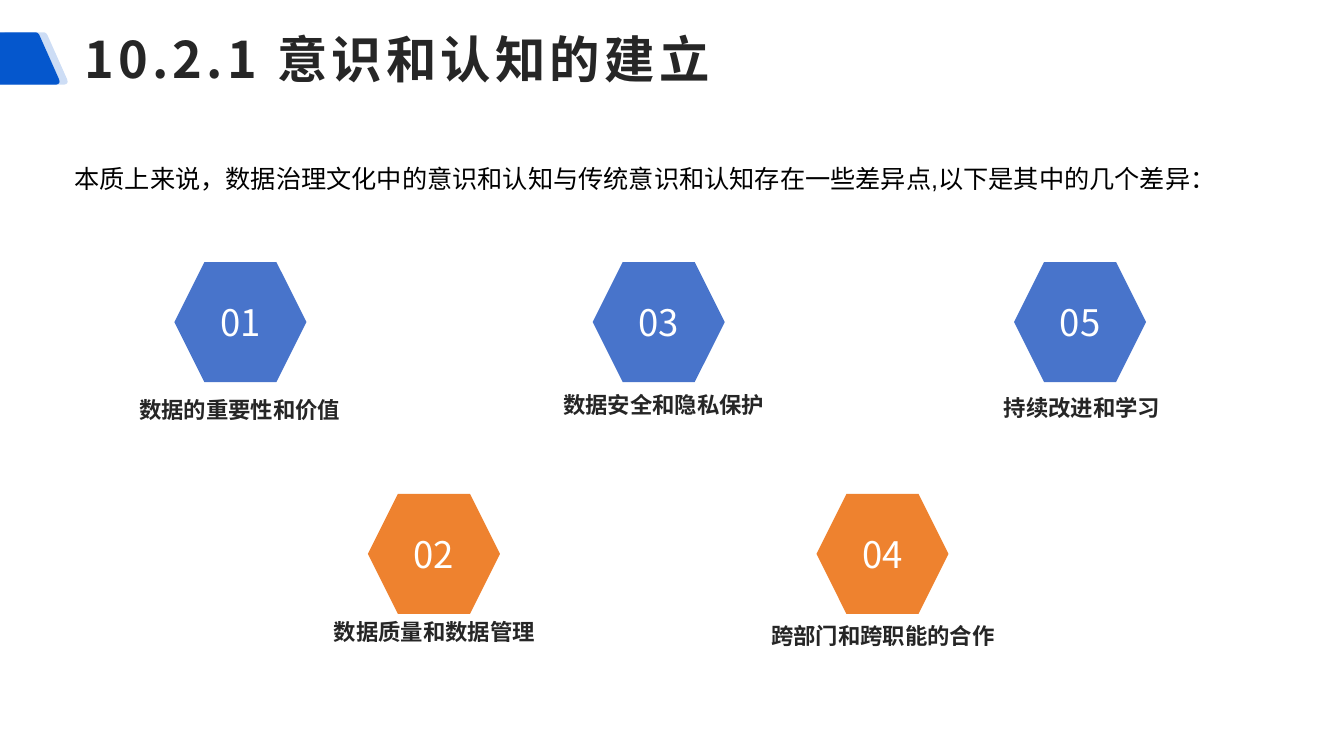
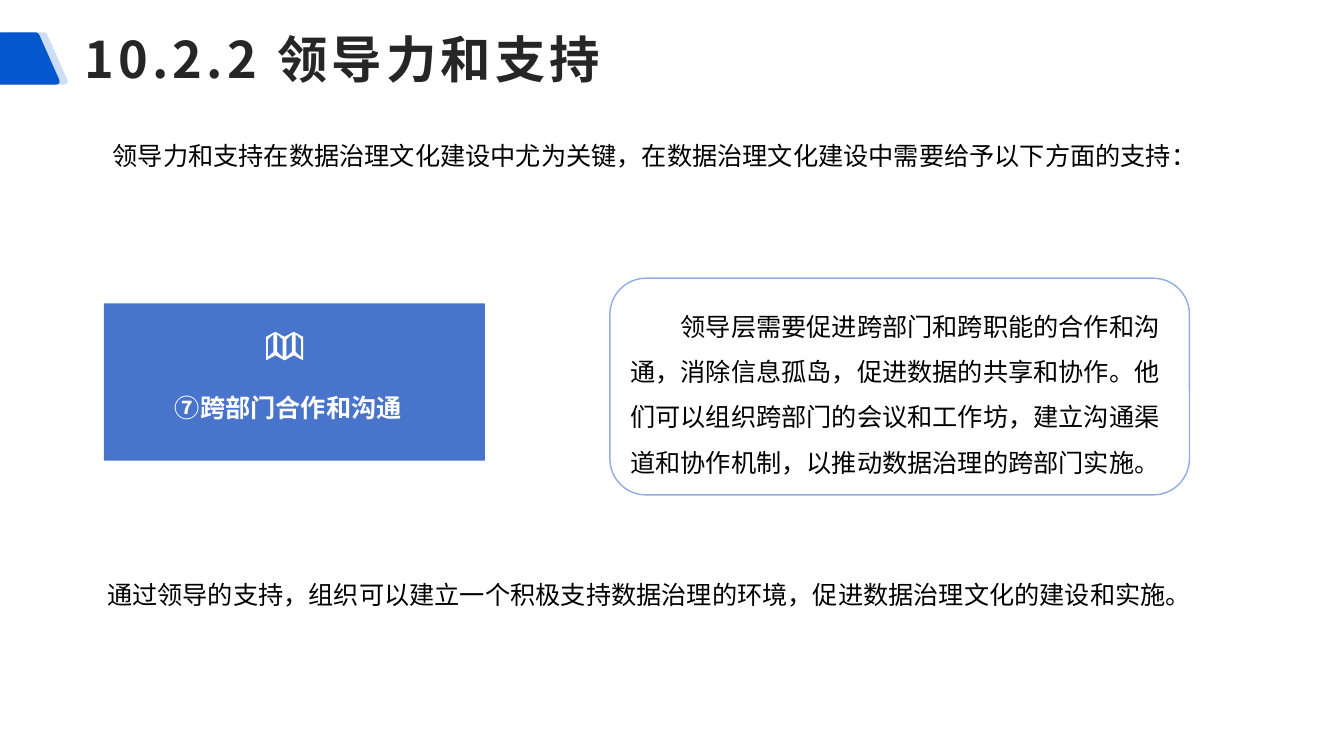
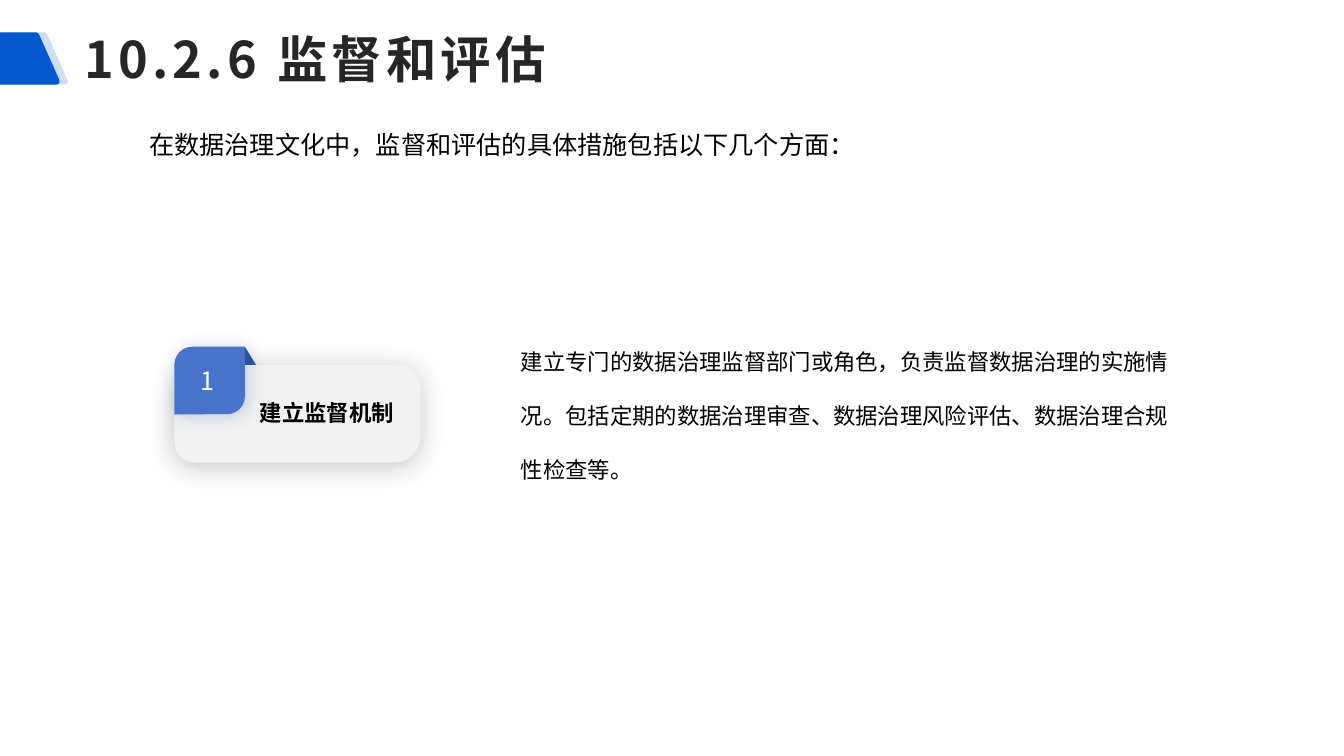
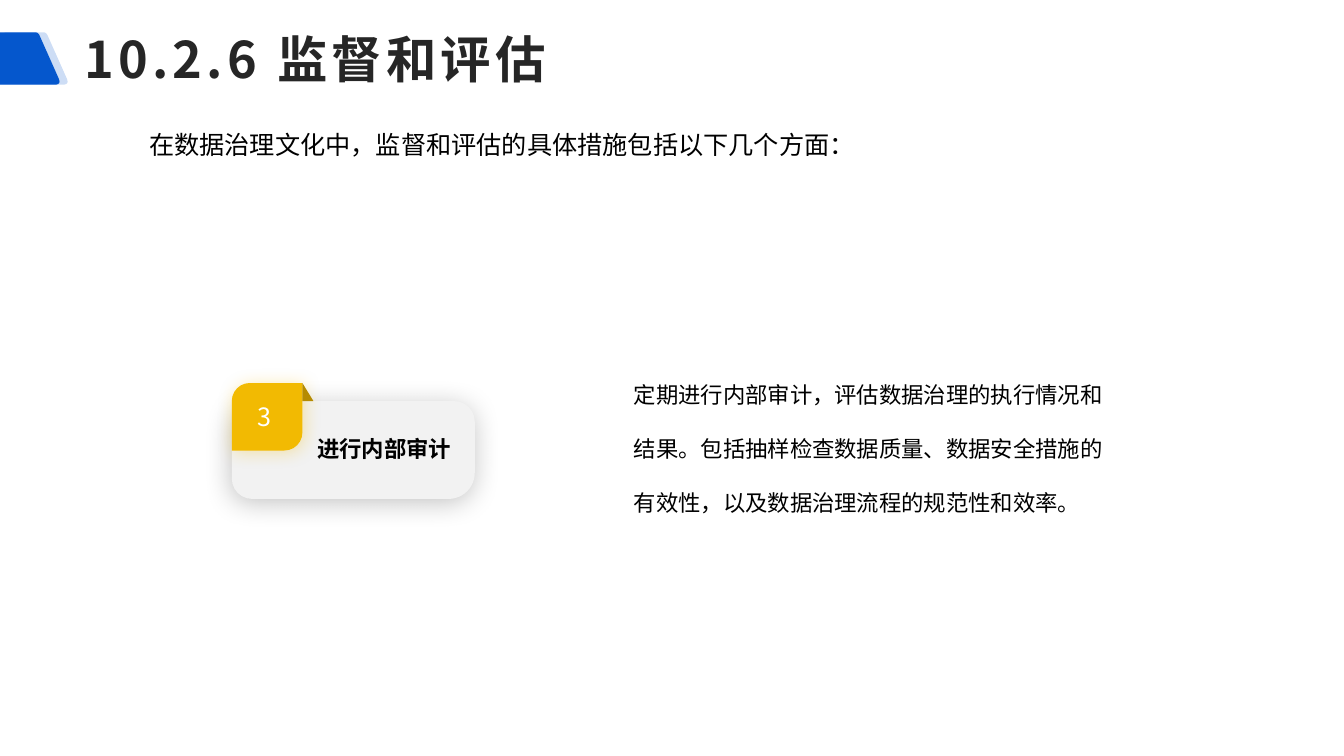
import dataclasses
import math

import pptx
import pptx.dml.color
import pptx.enum.shapes
import pptx.enum.text
import pptx.oxml
import pptx.oxml.ns
import pptx.util


@dataclasses.dataclass(frozen=True)
class Theme:
    band: str = "0557CD"
    blue: str = "4874CB"
    blue_fold: str = "2E54A1"
    pale_blue: str = "91ACE0"
    orange: str = "EE822F"
    yellow: str = "F2BA02"
    yellow_fold: str = "B58B01"
    card: str = "F2F2F2"
    ink: str = "262626"
    black: str = "000000"
    white: str = "FFFFFF"
    heading_font: str = "Noto Sans CJK SC"
    body_font: str = "Arial"
    label_font: str = "Times New Roman"
    title_size: float = 36
    number_size: float = 26.1
    body_size: float = 18
    label_size: float = 16


theme = Theme()
Kind = pptx.enum.shapes.MSO_SHAPE
CENTER = pptx.enum.text.PP_ALIGN.CENTER
MIDDLE = pptx.enum.text.MSO_ANCHOR.MIDDLE
qn = pptx.oxml.ns.qn

deck = pptx.Presentation()
deck.slide_width = pptx.util.Inches(13.333)
deck.slide_height = pptx.util.Inches(7.5)
COLUMNS, ROWS = 160, 90
column = deck.slide_width / COLUMNS
row = deck.slide_height / ROWS


def area(left, top, width, height):
    return [round(left * column), round(top * row), round(width * column), round(height * row)]


def write(shape, text, color=theme.black, indent=0, spacing=0, frame=(), paragraph=(), font=()):
    line = shape.text_frame.paragraphs[0]
    run = line.add_run()
    run.text = text
    formats = (
        (shape.text_frame, {"word_wrap": True, "auto_size": pptx.enum.text.MSO_AUTO_SIZE.NONE}, frame),
        (line, {"alignment": pptx.enum.text.PP_ALIGN.LEFT}, paragraph),
        (run.font, {"name": theme.body_font, "size": pptx.util.Pt(theme.body_size), "bold": False}, font),
    )
    for target, defaults, changes in formats:
        for attribute, value in {**defaults, **dict(changes)}.items():
            setattr(target, attribute, value)
    run.font.color.rgb = pptx.dml.color.RGBColor.from_string(color)
    properties = run._r.get_or_add_rPr()
    properties.set("lang", "zh-CN")
    if spacing:
        properties.set("spc", str(spacing * 100))
    east_asian = properties.makeelement(qn("a:ea"), {"typeface": theme.heading_font})
    properties.find(qn("a:latin")).addnext(east_asian)
    if indent:
        line._p.get_or_add_pPr().set("indent", str(round(indent * column)))


layout = deck.slide_layouts.get_by_name("Title Only")
for attribute, value in zip(("left", "top", "width", "height"), area(8.88, 0.96, 151.08, 12)):
    setattr(layout.placeholders[0], attribute, value)

title_style = {
    "color": theme.ink,
    "spacing": 3,
    "frame": {"vertical_anchor": MIDDLE},
    "font": {"name": theme.heading_font, "size": pptx.util.Pt(theme.title_size), "bold": True},
}
titles = ("10.2.1 意识和认知的建立", "10.2.2 领导力和支持", "10.2.6 监督和评估", "10.2.6 监督和评估")
slides = []
for title in titles:
    slide = deck.slides.add_slide(layout)
    write(slide.shapes.title, title, **title_style)
    slides.append(slide)
awareness, leadership, mechanism, audit = slides

band_corners = ((0.4, 3.84, 0.4), (5.5, 3.84, 0.4), (8.28, 10.08, 0.8), (-2.3, 10.08, 0.8))
for shift, opacity in ((0, 20), (-0.96, 100)):
    outline = []
    for index, (x, y, cut) in enumerate(band_corners):
        ends = []
        for neighbour in (band_corners[index - 1], band_corners[(index + 1) % 4]):
            share = cut / math.dist((x, y), neighbour[:2])
            ends.append((x + (neighbour[0] - x) * share, y + (neighbour[1] - y) * share))
        for step in range(7):
            t = step / 6
            curve = [
                (1 - t) ** 2 * start + 2 * t * (1 - t) * middle + t**2 * end
                for start, middle, end in zip(ends[0], (x, y), ends[1])
            ]
            outline.append((round((curve[0] + shift) * column), round(curve[1] * row)))
    builder = awareness.shapes.build_freeform(*outline[0])
    builder.add_line_segments(outline[1:])
    band = builder.convert_to_shape()
    band.shadow.inherit = False
    band.line.fill.background()
    band.fill.solid()
    band.fill.fore_color.rgb = pptx.dml.color.RGBColor.from_string(theme.band)
    tint = band._element.spPr.find(qn("a:solidFill"))[0]
    tint.append(tint.makeelement(qn("a:alpha"), {"val": str(opacity * 1000)}))
    layout.shapes.element.append(band._element)

intro = {"paragraph": {"line_spacing": 1.5}}
bold_label = {"name": theme.label_font, "size": pptx.util.Pt(theme.label_size), "bold": True}
measures = "在数据治理文化中，监督和评估的具体措施包括以下几个方面："
bubble_text = "领导层需要促进跨部门和跨职能的合作和沟通，消除信息孤岛，促进数据的共享和协作。他们可以组织跨部门的会议和工作坊，建立沟通渠道和协作机制，以推动数据治理的跨部门实施。"

panels = [
    (leadership, Kind.ROUNDED_RECTANGLE, (12.36, 36.12, 45.36, 18.72),
     {"fill": theme.blue, "adjust": (0.005,)}),
    (leadership, Kind.ROUNDED_RECTANGLE, (72.6, 33.12, 69, 25.8),
     {"line": theme.pale_blue, "text": bubble_text,
      "style": {"indent": 6, "frame": {"vertical_anchor": MIDDLE}, **intro}}),
]
texts = [
    (awareness, "本质上来说，数据治理文化中的意识和认知与传统意识和认知存在一些差异点,以下是其中的几个差异：",
     (7.68, 17.04, 145.44, 6.6), intro),
    (leadership, "领导力和支持在数据治理文化建设中尤为关键，在数据治理文化建设中需要给予以下方面的支持：",
     (12.24, 16.08, 133.08, 4.8), {}),
    (leadership, "通过领导的支持，组织可以建立一个积极支持数据治理的环境，促进数据治理文化的建设和实施。",
     (8.88, 68.4, 134.4, 4.8), {"indent": 2.7}),
    (leadership, "⑦跨部门合作和沟通", (10.2, 44.28, 48.24, 9),
     {"color": theme.white, "frame": {"margin_left": 0, "margin_right": 0},
      "paragraph": {"alignment": CENTER, "line_spacing": 1.5}, "font": {"bold": True}}),
]

differences = (
    ("数据的重要性和价值", 20.76, (13.2, 46.56, 30.72, 4.44), 1),
    ("数据质量和数据管理", 43.8, (28.44, 72.96, 46.56, 4.44), 1),
    ("数据安全和隐私保护", 70.56, (63.84, 44.64, 30.36, 5.76), 1.4),
    ("跨部门和跨职能的合作", 97.2, (88.44, 72.24, 33.36, 5.76), 1.4),
    ("持续改进和学习", 120.72, (109.44, 45, 38.76, 5.76), 1.4),
)
number_style = {
    "color": theme.white,
    "frame": {"vertical_anchor": MIDDLE, "margin_left": 0, "margin_right": 0},
    "paragraph": {"alignment": CENTER},
    "font": {"name": theme.heading_font, "size": pptx.util.Pt(theme.number_size)},
}
for index, (difference, left, label_area, leading) in enumerate(differences):
    top, fill = ((31.2, theme.blue), (58.8, theme.orange))[index % 2]
    panels.append((awareness, Kind.HEXAGON, (left, top, 15.72, 14.28),
                   {"fill": fill, "text": f"{index + 1:02}", "style": number_style}))
    texts.append((awareness, difference, label_area, {
        "color": theme.ink,
        "frame": {"vertical_anchor": MIDDLE} if leading == 1 else {},
        "paragraph": {"alignment": CENTER, "line_spacing": leading},
        "font": bold_label,
    }))

cards = (
    (mechanism, "1", "建立监督机制", theme.blue, theme.blue_fold, theme.body_font, 20.76, 41.28, 29.28,
     (60.84, 37.68, 80.04, 22.08),
     "建立专门的数据治理监督部门或角色，负责监督数据治理的实施情况。包括定期的数据治理审查、数据治理风险评估、数据治理合规性检查等。"),
    (audit, "3", "进行内部审计", theme.yellow, theme.yellow_fold, theme.label_font, 27.6, 45.6, 28.92,
     (74.28, 41.64, 60, 23.04),
     "定期进行内部审计，评估数据治理的执行情况和结果。包括抽样检查数据质量、数据安全措施的有效性，以及数据治理流程的规范性和效率。"),
)
for slide, number, measure, accent, fold, font, left, top, width, detail_area, detail in cards:
    panels += [
        (slide, Kind.ROUND_2_DIAG_RECTANGLE, (left, top + 2.16, width, 11.64),
         {"fill": theme.card, "adjust": (0.267, 0.208), "shadow": (theme.black, 23, 20, 3, 107)}),
        (slide, Kind.ROUND_2_DIAG_RECTANGLE, (left, top, 8.4, 8.04),
         {"fill": accent, "adjust": (0.267, 0), "shadow": (accent, 31, 13, 2, 45)}),
        (slide, Kind.RIGHT_TRIANGLE, (left + 8.4, top, 1.32, 2.16), {"fill": fold}),
    ]
    texts += [
        (slide, measures, (10.56, 12.96, 139.2, 6.6), {"indent": 6, **intro}),
        (slide, measure, (left + 9, top + 2.7, 19.7, 10.44),
         {"frame": {"vertical_anchor": MIDDLE, "margin_top": 0, "margin_bottom": pptx.util.Inches(0.12)},
          "paragraph": {"line_spacing": 1.4}, "font": {**bold_label, "name": font}}),
        (slide, number, (left + 1.92, top + 1.6, 6.48, 4.8),
         {"color": theme.white, "font": {"name": theme.heading_font}}),
        (slide, detail, detail_area,
         {"paragraph": {"line_spacing": 2.0},
          "font": {"name": font, "size": pptx.util.Pt(theme.label_size)}}),
    ]

for slide, kind, place, look in panels:
    panel = slide.shapes.add_shape(kind, *area(*place))
    panel.shadow.inherit = False
    for index, value in enumerate(look.get("adjust", ())):
        panel.adjustments[index] = value
    for paint, color in ((panel.fill, look.get("fill")), (panel.line.fill, look.get("line"))):
        if color:
            paint.solid()
            paint.fore_color.rgb = pptx.dml.color.RGBColor.from_string(color)
        else:
            paint.background()
    if "line" in look:
        panel.line.width = pptx.util.Pt(1)
    if "shadow" in look:
        color, opacity, blur, distance, angle = look["shadow"]
        panel._element.spPr.find(qn("a:effectLst")).append(pptx.oxml.parse_xml(
            f'<a:outerShdw {pptx.oxml.ns.nsdecls("a")} blurRad="{pptx.util.Pt(blur)}" '
            f'dist="{pptx.util.Pt(distance)}" dir="{angle * 60000}" algn="ctr" rotWithShape="0">'
            f'<a:srgbClr val="{color}"><a:alpha val="{opacity * 1000}"/></a:srgbClr></a:outerShdw>'))
    if "text" in look:
        write(panel, look["text"], **look["style"])

folds = [(31.68 + 1.1 * index, 40.1 - 0.6 * (index % 2), 42.9 - 0.6 * (index % 2)) for index in range(5)]
contours = [[(x, top) for x, top, bottom in folds] + [(x, bottom) for x, top, bottom in reversed(folds)]]
for (x, top, bottom), (next_x, next_top, next_bottom) in zip(folds, folds[1:]):
    contours.append([
        (x + 0.22, top + 0.3), (x + 0.22, bottom - 0.4),
        (next_x - 0.22, next_bottom - 0.4), (next_x - 0.22, next_top + 0.3),
    ])
builder = None
for contour in contours:
    points = [(round(x * column), round(y * row)) for x, y in contour]
    if builder:
        builder.move_to(*points[0])
    else:
        builder = leadership.shapes.build_freeform(*points[0])
    builder.add_line_segments(points[1:])
folded_map = builder.convert_to_shape()
folded_map.shadow.inherit = False
folded_map.line.fill.background()
folded_map.fill.solid()
folded_map.fill.fore_color.rgb = pptx.dml.color.RGBColor.from_string(theme.white)

for slide, text, place, style in texts:
    write(slide.shapes.add_textbox(*area(*place)), text, **style)

deck.save("out.pptx")
